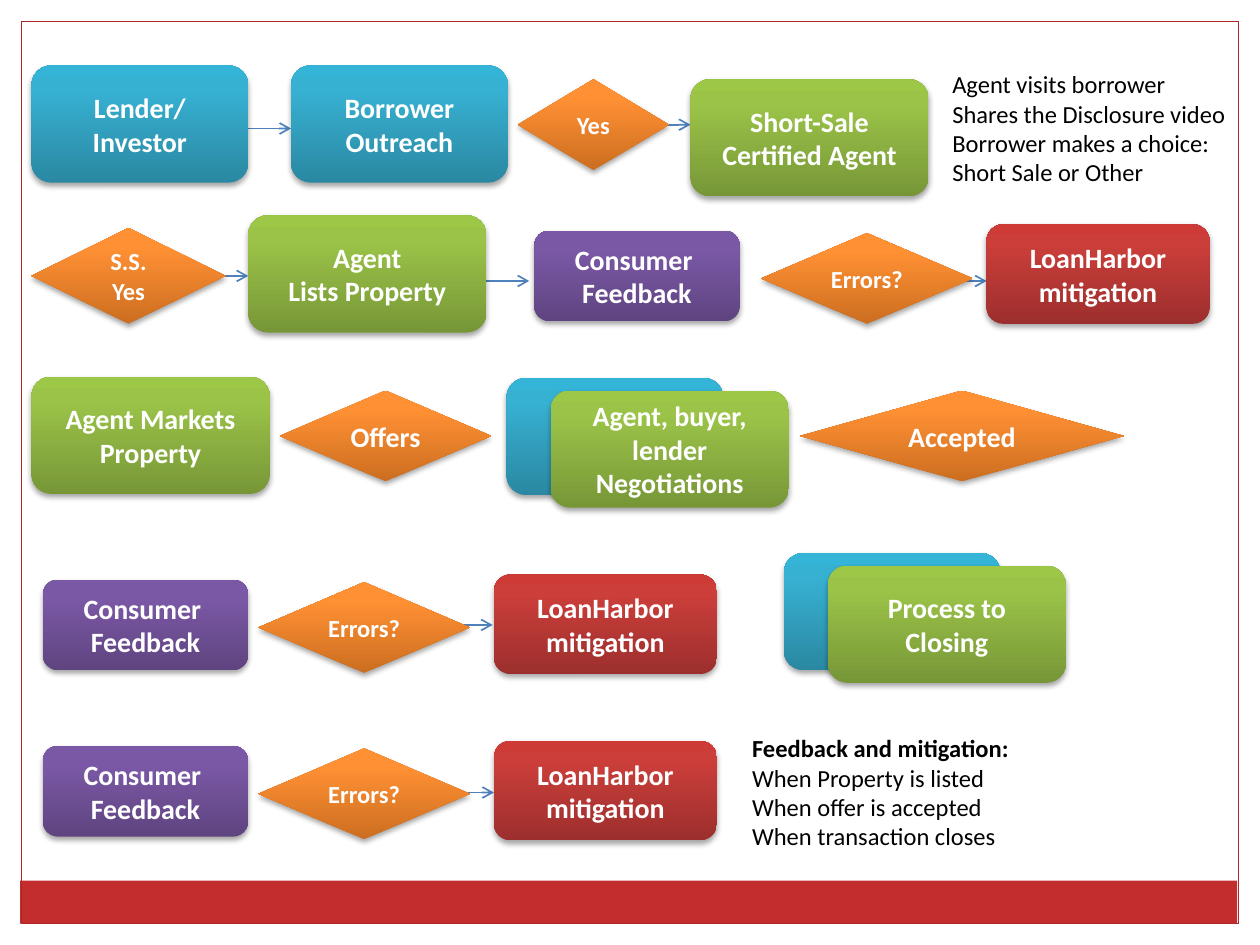
import copy

import lxml.etree
import pptx
import pptx.dml.color
import pptx.enum.shapes
import pptx.enum.text
import pptx.oxml.ns
import pptx.util

PX = 9144  # 100 px to the inch
SHAPE = pptx.enum.shapes.MSO_SHAPE
ALIGN = pptx.enum.text.PP_ALIGN
ANCHOR = pptx.enum.text.MSO_ANCHOR
qn = pptx.oxml.ns.qn


def rgb(value):
    return pptx.dml.color.RGBColor.from_string(value)


def px(*values):
    return [pptx.util.Emu(v * PX) for v in values]


def add_xml(parent, tag, **attributes):
    return lxml.etree.SubElement(parent, qn(tag), attributes)


class FlowSlide:
    font = "Calibri"
    line_color = "4F81BD"
    stops = (0, 0.8, 1)
    gradients = {
        "lender": ("2A88A2", "37B1D2", "34B4D6"),
        "agent": ("779737", "9BC348", "9DC746"),
        "feedback": ("5F4480", "7B58A6", "7C57A8"),
        "mitigation": ("9C2F2D", "CB3E3A", "CE3B37"),
        "decision": ("CC6E20", "FF9034", "FF9136"),
    }

    def __init__(self, slide):
        self.s = slide

    def rect(self, box, fill=None, line=None):
        sp = self.s.shapes.add_shape(SHAPE.RECTANGLE, *px(*box))
        sp.shadow.inherit = False
        if fill:
            sp.fill.solid()
            sp.fill.fore_color.rgb = rgb(fill)
        else:
            sp.fill.background()
        if line:
            sp.line.color.rgb = rgb(line)
            sp.line.width = pptx.util.Pt(0.75)
        else:
            sp.line.fill.background()

    def arrow(self, x1, x2, y):
        kind = pptx.enum.shapes.MSO_CONNECTOR.STRAIGHT
        cn = self.s.shapes.add_connector(kind, *px(x1, y, x2, y))
        cn.line.color.rgb = rgb(self.line_color)
        cn.line.width = pptx.util.Pt(1)
        properties = cn._element.spPr
        add_xml(properties.find(qn("a:ln")), "a:tailEnd", type="arrow")
        add_xml(properties, "a:effectLst")

    def gradient(self, sp, colors):
        sp.fill.gradient()
        sp.fill.gradient_angle = 90
        stop_list = sp._element.spPr.find(qn("a:gradFill")).find(qn("a:gsLst"))
        stop_list.append(copy.deepcopy(stop_list[0]))
        for stop, position, color in zip(sp.fill.gradient_stops, self.stops, colors):
            stop.position = position
            stop.color.rgb = rgb(color)

    def shadow(self, sp):
        sp.shadow.inherit = False
        effects = sp._element.spPr.find(qn("a:effectLst"))
        outer = add_xml(effects, "a:outerShdw", blurRad="40000", dist="23000",
                        dir="5400000", rotWithShape="0")
        color = add_xml(outer, "a:srgbClr", val="000000")
        add_xml(color, "a:alpha", val="35000")

    def add_text(self, p, text, size, color, bold):
        for i, line in enumerate(text.split("\n")):
            if i:
                p.add_line_break()
            r = p.add_run()
            r.text = line
            r.font.name = self.font
            r.font.size = pptx.util.Pt(size)
            r.font.bold = bold
            r.font.color.rgb = rgb(color)

    def step(self, role, box, paragraphs=(), size=16):
        decision = role == "decision"
        kind = SHAPE.FLOWCHART_DECISION if decision else SHAPE.ROUNDED_RECTANGLE
        sp = self.s.shapes.add_shape(kind, *px(*box))
        self.gradient(sp, self.gradients[role])
        sp.line.fill.background()
        self.shadow(sp)
        tf = sp.text_frame
        tf.word_wrap = True
        tf.vertical_anchor = ANCHOR.MIDDLE
        for i, text in enumerate(paragraphs):
            p = tf.add_paragraph() if i else tf.paragraphs[0]
            p.alignment = ALIGN.CENTER
            self.add_text(p, text, size, "FFFFFF", True)

    def note(self, box, paragraphs):
        tf = self.s.shapes.add_textbox(*px(*box)).text_frame
        tf.word_wrap = False
        tf.auto_size = pptx.enum.text.MSO_AUTO_SIZE.SHAPE_TO_FIT_TEXT
        for i, (text, bold) in enumerate(paragraphs):
            p = tf.add_paragraph() if i else tf.paragraphs[0]
            self.add_text(p, text, 14, "000000", bold)

    # Recurring steps of the process
    def lender(self, x, y, *paragraphs):
        self.step("lender", (x, y, 172, 93), paragraphs)

    def agent(self, x, y, *paragraphs):
        self.step("agent", (x, y, 189, 93), paragraphs)

    def decision(self, x, y, w, text, size=14, h=72):
        self.step("decision", (x, y, w, h), [text], size)

    def feedback_chain(self, feedback, errors, mitigation):
        self.step("feedback", (*feedback, 163, 72), ["Consumer \nFeedback"])
        self.decision(*errors, 168, "Errors?")
        self.step("mitigation", (*mitigation, 177, 79), ["LoanHarbor\nmitigation"])


def main():
    prs = pptx.Presentation()
    prs.slide_width, prs.slide_height = px(1000, 750)
    flow = FlowSlide(prs.slides.add_slide(prs.slide_layouts[6]))

    # Frame and footer band
    flow.rect((16, 699, 966, 34), fill="C32D2E")
    flow.rect((17, 17, 966, 716), line="AC2829")

    # Arrows lie behind the steps
    for x1, x2, y in [(289, 392, 629), (288, 391, 496), (680, 783, 223),
                      (317, 420, 223), (94, 197, 219), (445, 548, 99),
                      (128, 231, 102)]:
        flow.arrow(x1, x2, y)

    # Row 1: outreach
    flow.lender(25, 52, "Lender/\nInvestor")
    flow.lender(231, 52, "Borrower\nOutreach")
    flow.decision(411, 63, 120, "Yes")
    flow.agent(548, 63, "Short-Sale\nCertified Agent")
    flow.note((746, 50, 246, 106), [
        ("Agent visits borrower\nShares the Disclosure video\n"
         "Borrower makes a choice:\nShort Sale or Other", False)])

    # Row 2: listing
    flow.decision(25, 181, 154, "S.S.\nYes", h=76)
    flow.agent(197, 171, "Agent\nLists Property")
    flow.feedback_chain((424, 183), (604, 185), (783, 178))

    # Row 3: offers
    flow.agent(25, 299, "Agent Markets Property")
    flow.decision(222, 310, 168, "Offers", 16)
    flow.lender(402, 300)
    flow.agent(437, 310, "Agent, buyer, lender", "Negotiations")
    flow.decision(635, 310, 257, "Accepted", 16)

    # Row 4: closing
    flow.lender(622, 439)
    flow.agent(657, 449, "Process to\nClosing")

    # Summary of feedback rounds
    flow.note((587, 577, 232, 106), [
        ("Feedback and mitigation:", True),
        ("When Property is listed", False),
        ("When offer is accepted", False),
        ("When transaction closes", False)])

    # Rows 4 and 5: feedback rounds
    for y in (460, 592):
        flow.feedback_chain((34, y), (205, y + 2), (392, y - 4))

    prs.save("out.pptx")


if __name__ == "__main__":
    main()
